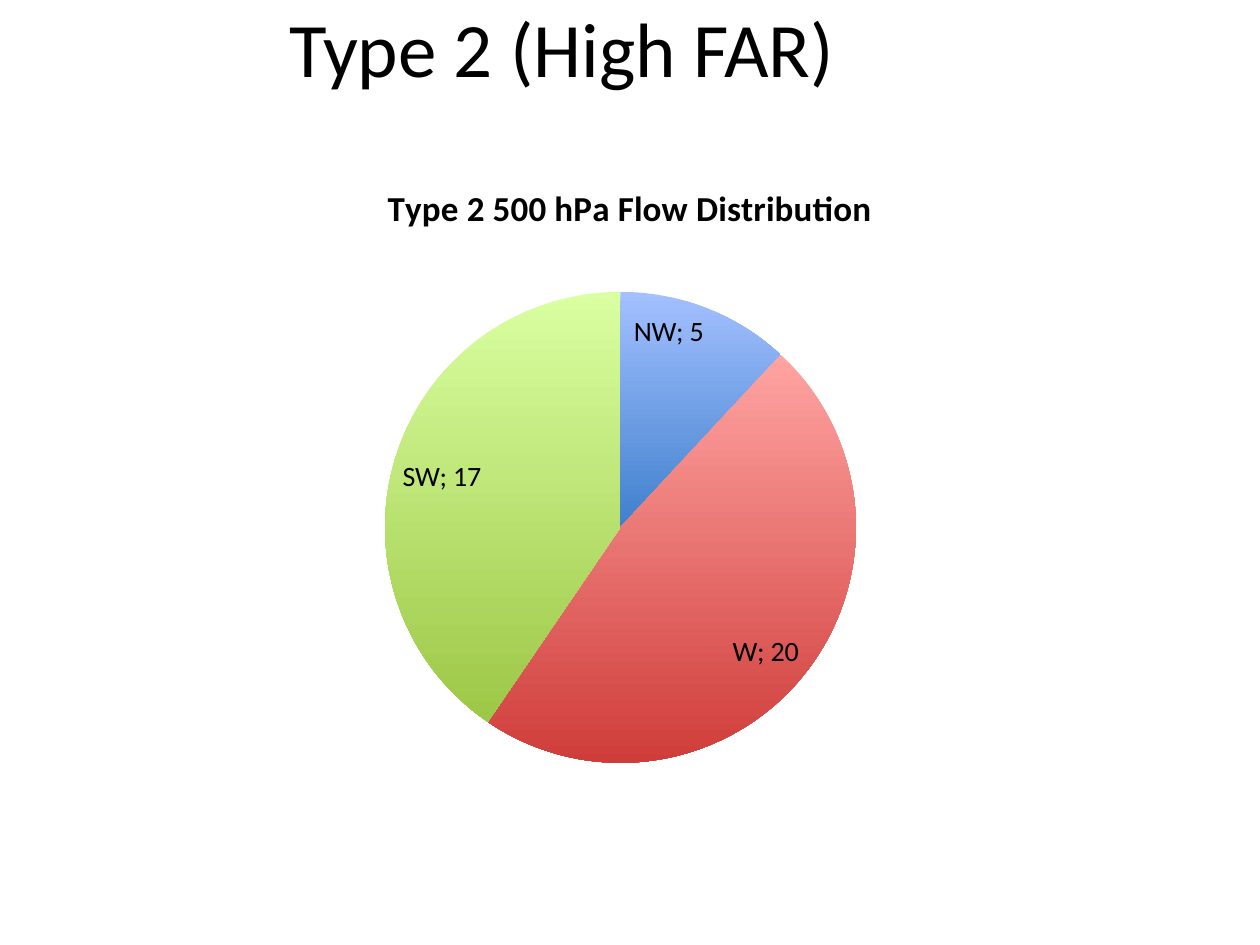
"""Build the Type 2 (High FAR) slide with its flow distribution pie chart."""
import dataclasses

import lxml.etree
import pptx
import pptx.chart.data
import pptx.dml.color
import pptx.enum.chart
import pptx.enum.text
import pptx.oxml.ns
import pptx.util

PX = 914400 // 126


@dataclasses.dataclass(frozen=True)
class Theme:
    font: str = "Calibri"
    text: str = "000000"
    title_size: int = 44
    chart_title_size: int = 20
    label_size: int = 16
    chart_size: int = 10


theme = Theme()
flows = [
    ("NW", 5, "A3C0FF", "3F80CD"),
    ("W", 20, "FFA4A2", "CF3D3A"),
    ("SW", 17, "D9FFA1", "9DC746"),
]


def style_font(font, size, bold=False):
    font.name = theme.font
    font.size = pptx.util.Pt(size)
    font.bold = bold
    font.color.rgb = pptx.dml.color.RGBColor.from_string(theme.text)


def add_element(parent, tag, value=None):
    element = lxml.etree.SubElement(parent, pptx.oxml.ns.qn(tag))
    if value is not None:
        element.set("val", str(value))
    return element


presentation = pptx.Presentation()
presentation.slide_width = pptx.util.Inches(10)
presentation.slide_height = pptx.util.Inches(7.5)
slide = presentation.slides.add_slide(presentation.slide_layouts[5])

title = slide.shapes.title
title.left, title.top, title.width, title.height = [n * PX for n in (63, -32, 998, 158)]
title.text_frame.text = "Type 2 (High FAR)"
title.text_frame.vertical_anchor = pptx.enum.text.MSO_ANCHOR.MIDDLE
paragraph = title.text_frame.paragraphs[0]
paragraph.alignment = pptx.enum.text.PP_ALIGN.CENTER
style_font(paragraph.runs[0].font, theme.title_size)

chart_data = pptx.chart.data.CategoryChartData()
chart_data.categories = [flow[0] for flow in flows]
chart_data.add_series("Series 1", [flow[1] for flow in flows])
chart = slide.shapes.add_chart(
    pptx.enum.chart.XL_CHART_TYPE.PIE, *[n * PX for n in (63, 158, 1134, 624)], chart_data
).chart
chart.has_legend = False
style_font(chart.font, theme.chart_size)
chart.has_title = True
chart.chart_title.include_in_layout = False
chart.chart_title.text_frame.text = "Type 2 500 hPa Flow Distribution"
chart_title_run = chart.chart_title.text_frame.paragraphs[0].runs[0]
style_font(chart_title_run.font, theme.chart_title_size, bold=True)

plot = chart.plots[0]
plot.vary_by_categories = True
for index, (name, count, top_color, bottom_color) in enumerate(flows):
    point_format = plot.series[0].points[index].format
    point_format.fill.gradient()
    point_format.fill.gradient_angle = 270
    for stop, color in zip(point_format.fill.gradient_stops, (top_color, bottom_color)):
        stop.color.rgb = pptx.dml.color.RGBColor.from_string(color)
    point_format.line.fill.background()

plot.has_data_labels = True
labels = plot.data_labels
labels.show_category_name = True
labels.show_value = True
labels.show_percentage = False
labels.position = pptx.enum.chart.XL_LABEL_POSITION.INSIDE_END
style_font(labels.font, theme.label_size)

plot_area = chart.element.find(".//" + pptx.oxml.ns.qn("c:plotArea"))
for layout in plot_area.findall(pptx.oxml.ns.qn("c:layout")):
    plot_area.remove(layout)
layout = add_element(plot_area, "c:layout")
plot_area.insert(0, layout)
manual_layout = add_element(layout, "c:manualLayout")
for tag, value in (
    ("c:layoutTarget", "inner"),
    ("c:xMode", "edge"),
    ("c:yMode", "edge"),
    ("c:x", round((385 - 63) / 1134, 4)),
    ("c:y", round((292 - 158) / 624, 4)),
    ("c:w", round(471 / 1134, 4)),
    ("c:h", round(471 / 624, 4)),
):
    add_element(manual_layout, tag, value)

presentation.save("out.pptx")
